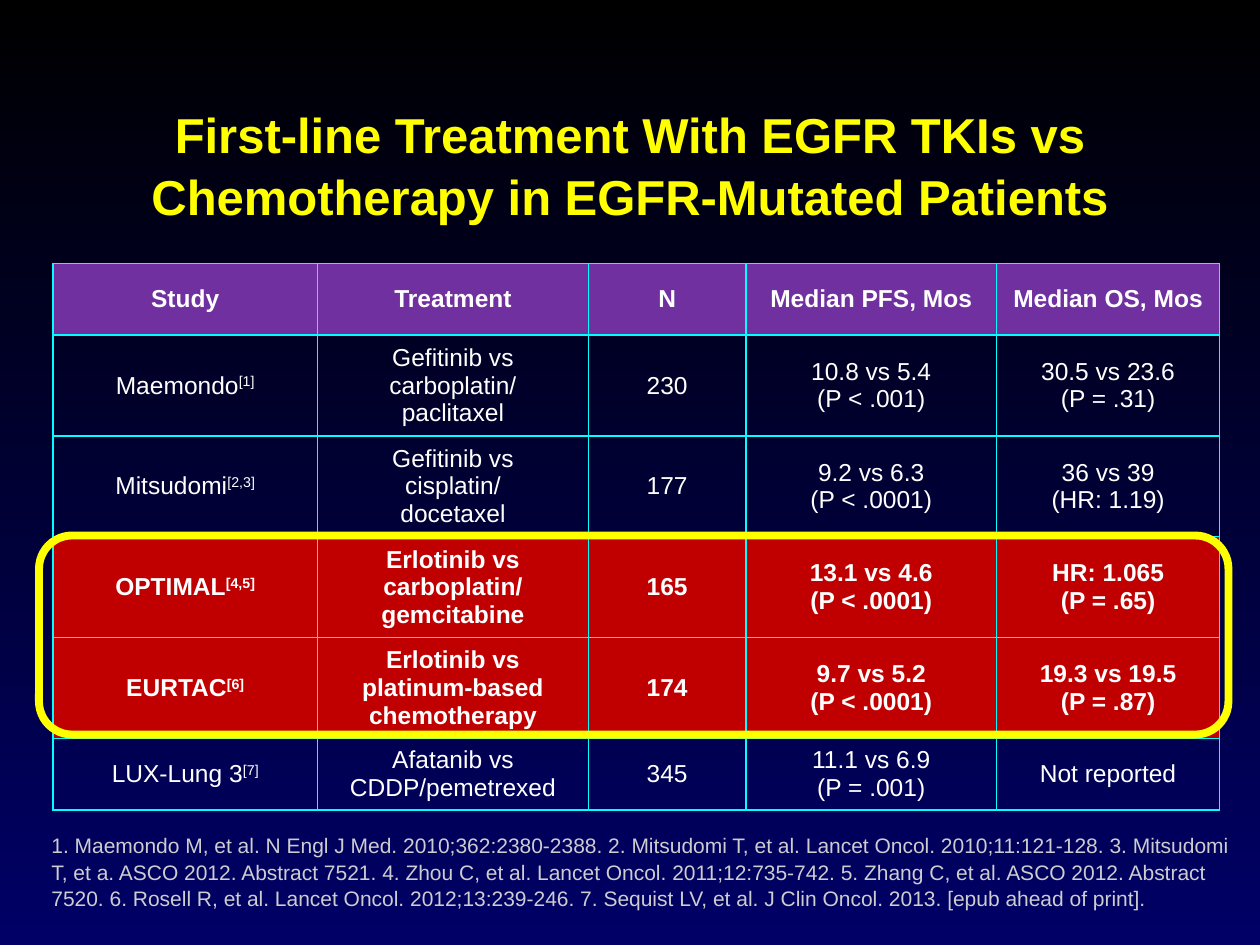
"""Build a slide comparing first-line EGFR TKI trials with chemotherapy."""
from dataclasses import dataclass

from lxml.etree import SubElement
from pptx import Presentation
from pptx.dml.color import RGBColor
from pptx.enum.shapes import MSO_SHAPE as Shape
from pptx.enum.text import MSO_ANCHOR as Anchor, MSO_AUTO_SIZE as AutoSize, PP_ALIGN as Align
from pptx.oxml.ns import qn
from pptx.util import Inches, Pt

WHITE, YELLOW, CYAN = "FFFFFF", "FFFF00", "00FFFF"
PURPLE, RED, GREY = "7030A0", "C00000", "CDCDCF"
TITLE = "First-line Treatment With EGFR TKIs vs Chemotherapy in EGFR-Mutated Patients"
REFERENCES = (
    "1. Maemondo M, et al. N Engl J Med. 2010;362:2380-2388. "
    "2. Mitsudomi T, et al. Lancet Oncol. 2010;11:121-128. "
    "3. Mitsudomi T, et a. ASCO 2012. Abstract 7521. "
    "4. Zhou C, et al. Lancet Oncol. 2011;12:735-742. "
    "5. Zhang C, et al. ASCO 2012. Abstract 7520. "
    "6. Rosell R, et al. Lancet Oncol. 2012;13:239-246. "
    "7. Sequist LV, et al. J Clin Oncol. 2013. [epub ahead of print]."
)
COLUMN_WIDTHS = (2.1, 2.15, 1.25, 1.99, 1.77)
ROW_HEIGHTS = (0.57, 0.8, 0.8, 0.8, 0.8, 0.57)


@dataclass
class Row:
    """One table row, with an optional citation after its first cell."""
    cells: tuple[str, ...]
    citation: str = ""
    fill: str | None = None


ROWS = (
    Row(("Study", "Treatment", "N", "Median PFS, Mos", "Median OS, Mos"), fill=PURPLE),
    Row(("Maemondo", "Gefitinib vs carboplatin/\vpaclitaxel", "230",
         "10.8 vs 5.4\n(P < .001)", "30.5 vs 23.6\n(P = .31)"), "[1]"),
    Row(("Mitsudomi", "Gefitinib vs\ncisplatin/\vdocetaxel", "177",
         "9.2 vs 6.3\n(P < .0001)", "36 vs 39\n(HR: 1.19)"), "[2,3]"),
    Row(("OPTIMAL", "Erlotinib vs\ncarboplatin/\ngemcitabine", "165",
         "13.1 vs 4.6\n(P < .0001)", "HR: 1.065\n(P = .65)"), "[4,5]", RED),
    Row(("EURTAC", "Erlotinib vs\nplatinum-based chemotherapy", "174",
         "9.7 vs 5.2\n(P < .0001)", "19.3 vs 19.5\n(P = .87)"), "[6]", RED),
    Row(("LUX-Lung 3", "Afatanib vs\nCDDP/pemetrexed", "345",
         "11.1 vs 6.9\n(P = .001)", "Not reported"), "[7]"),
)


def rgb(color: str) -> RGBColor:
    """Turn a hex string into a colour."""
    return RGBColor.from_string(color)


def style(frame, size: float, color: str, bold: bool, align: Align) -> None:
    """Format every paragraph of a text frame."""
    for para in frame.paragraphs:
        para.alignment = align
        font = para.font
        font.name, font.size, font.bold = "Arial", Pt(size), bold
        font.color.rgb = rgb(color)


def add_borders(cell, color: str, width: float) -> None:
    """Draw all four edges of a table cell."""
    properties = cell._tc.get_or_add_tcPr()
    for edge in ("a:lnL", "a:lnR", "a:lnT", "a:lnB"):
        line = SubElement(properties, qn(edge), w=str(Pt(width)))
        SubElement(SubElement(line, qn("a:solidFill")), qn("a:srgbClr"), val=color)


def fill_cell(cell, text: str, citation: str, fill: str | None) -> None:
    """Write and format one table cell."""
    cell.text = text
    if citation:
        span = cell.text_frame.paragraphs[0].add_run()
        span.text = citation
        span._r.get_or_add_rPr().set("baseline", "30000")
    style(cell.text_frame, 14, WHITE, fill is not None, Align.CENTER)
    cell.vertical_anchor = Anchor.MIDDLE
    add_borders(cell, CYAN, 1)
    if fill:
        cell.fill.solid()
        cell.fill.fore_color.rgb = rgb(fill)
    else:
        cell.fill.background()


def paint_background(page) -> None:
    """Fade the page from black at the top to navy."""
    fill = page.background.fill
    fill.gradient()
    fill.gradient_angle = 270
    for stop, color, position in zip(fill.gradient_stops, ("000000", "000066"), (0, 1)):
        stop.color.rgb = rgb(color)
        stop.position = position


def add_title(page) -> None:
    """Place the heading in the title placeholder."""
    title = page.shapes.title
    title.left, title.top = Inches(0.75), Inches(0.67)
    title.width, title.height = Inches(8.5), Inches(1.25)
    frame = title.text_frame
    frame.text = TITLE
    frame.auto_size, frame.vertical_anchor = AutoSize.NONE, Anchor.MIDDLE
    frame.paragraphs[0].line_spacing = 1.05
    style(frame, 28, YELLOW, True, Align.CENTER)


def add_trials(page) -> None:
    """Add the table of trials."""
    table = page.shapes.add_table(
        len(ROWS), len(COLUMN_WIDTHS), Inches(0.42), Inches(2.09),
        Inches(sum(COLUMN_WIDTHS)), Inches(sum(ROW_HEIGHTS))).table
    table.first_row = table.horz_banding = False
    for column, width in zip(table.columns, COLUMN_WIDTHS):
        column.width = Inches(width)
    for table_row, height, row in zip(table.rows, ROW_HEIGHTS, ROWS):
        table_row.height = Inches(height)
        for index, (cell, text) in enumerate(zip(table_row.cells, row.cells)):
            fill_cell(cell, text, "" if index else row.citation, row.fill)


def add_references(page) -> None:
    """Add the reference list under the table."""
    box = page.shapes.add_textbox(Inches(0.31), Inches(6.57), Inches(9.57), Inches(0.71))
    frame = box.text_frame
    frame.text = REFERENCES
    frame.word_wrap, frame.vertical_anchor = True, Anchor.BOTTOM
    frame.auto_size = AutoSize.SHAPE_TO_FIT_TEXT
    para = frame.paragraphs[0]
    para.line_spacing, para.space_before, para.space_after = 1.05, Pt(4), Pt(3)
    style(frame, 12, GREY, False, Align.LEFT)


def add_highlight(page) -> None:
    """Outline the two erlotinib trials."""
    outline = page.shapes.add_shape(
        Shape.ROUNDED_RECTANGLE, Inches(0.31), Inches(4.25), Inches(9.44), Inches(1.58))
    outline.shadow.inherit = False
    outline.fill.background()
    outline.line.color.rgb = rgb(YELLOW)
    outline.line.width = Pt(4.5)


def main() -> None:
    """Build and save the deck."""
    deck = Presentation()
    deck.slide_width, deck.slide_height = Inches(10), Inches(7.5)
    page = deck.slides.add_slide(deck.slide_layouts[5])
    paint_background(page)
    add_title(page)
    add_trials(page)
    add_references(page)
    add_highlight(page)
    deck.save("out.pptx")


if __name__ == "__main__":
    main()
